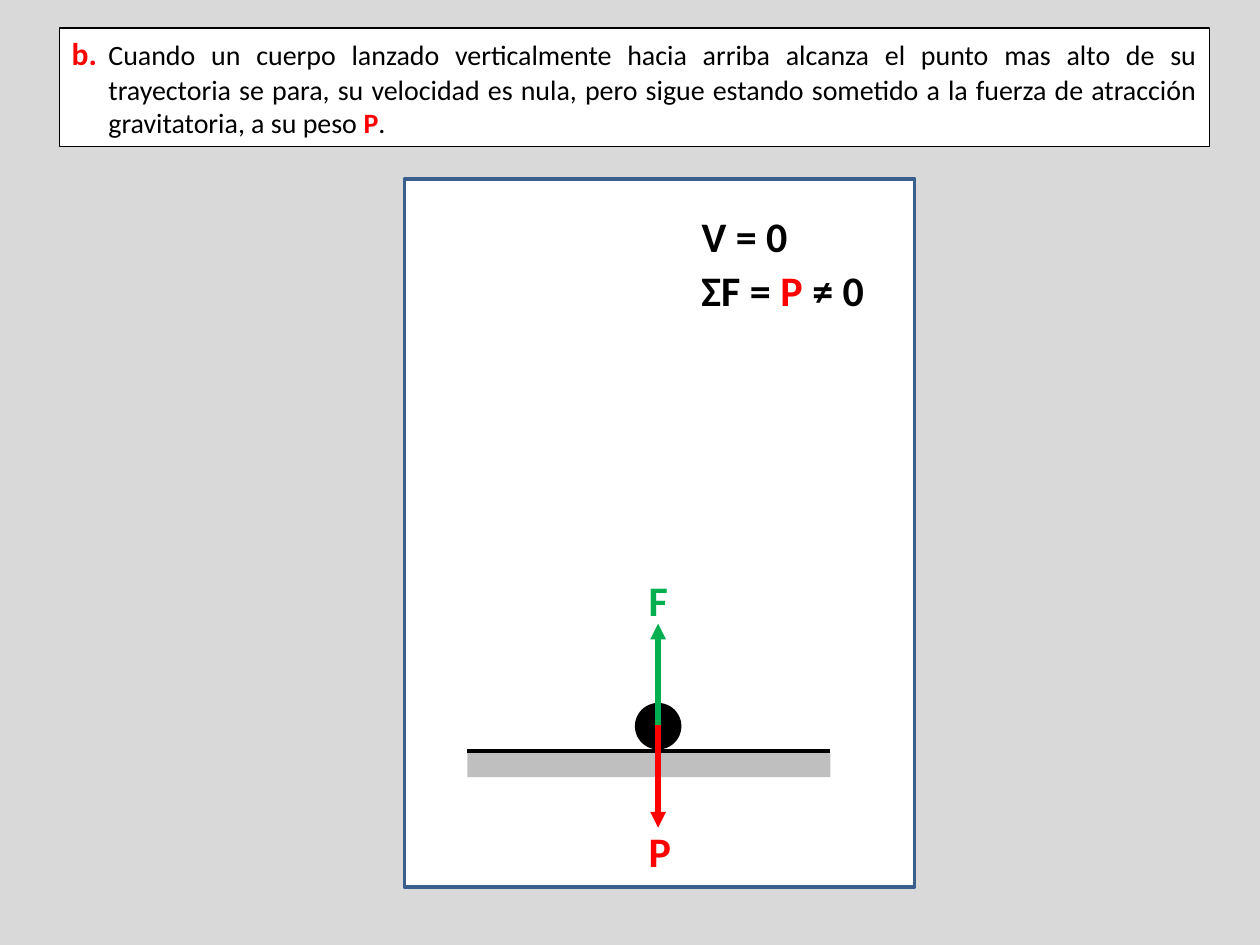
from lxml import etree
from pptx import Presentation
from pptx.dml.color import RGBColor
from pptx.enum.shapes import MSO_CONNECTOR, MSO_SHAPE
from pptx.enum.text import MSO_ANCHOR, PP_ALIGN
from pptx.oxml.ns import qn
from pptx.util import Pt

RECTANGLE = MSO_SHAPE.RECTANGLE
OVAL = MSO_SHAPE.OVAL
STRAIGHT = MSO_CONNECTOR.STRAIGHT
TOP = MSO_ANCHOR.TOP
JUSTIFY = PP_ALIGN.JUSTIFY
BLACK, WHITE, RED, GREEN = "000000", "FFFFFF", "FF0000", "00B050"


def color(value):
    return RGBColor.from_string(value)


def add_runs(paragraph, runs):
    for text, size, shade, bold in runs:
        run = paragraph.add_run()
        run.text = text
        run.font.name = "Calibri"
        run.font.size = Pt(size)
        run.font.bold = bold
        run.font.color.rgb = color(shade)


prs = Presentation()
prs.slide_width, prs.slide_height = Pt(720), Pt(540)
slide = prs.slides.add_slide(prs.slide_layouts[6])
slide.background.fill.solid()
slide.background.fill.fore_color.rgb = color("D9D9D9")

blocks = []
for preset, left, top, width, height, fill, outline, weight in [
    (RECTANGLE, 231.1, 102.2, 291.6, 404.6, WHITE, "3A5F8C", 2),
    (RECTANGLE, 267.1, 429.8, 207.4, 14.4, "BFBFBF", None, 0),
    (OVAL, 362.8, 401.7, 26.6, 26.6, BLACK, None, 0),
    (RECTANGLE, 33.9, 16.1, 657.4, 67.7, WHITE, BLACK, 0.75),
]:
    block = slide.shapes.add_shape(preset, Pt(left), Pt(top), Pt(width), Pt(height))
    block.shadow.inherit = False
    block.fill.solid()
    block.fill.fore_color.rgb = color(fill)
    if outline:
        block.line.color.rgb = color(outline)
        block.line.width = Pt(weight)
    else:
        block.line.fill.background()
    blocks.append(block)

for x1, y1, x2, y2, shade, weight, is_force in [
    (267.1, 429.4, 474.5, 429.4, BLACK, 2.25, False),
    (376.1, 414.5, 376.1, 473, RED, 3, True),
    (376.1, 414.2, 376.1, 356.4, GREEN, 3, True),
]:
    stroke = slide.shapes.add_connector(STRAIGHT, Pt(x1), Pt(y1), Pt(x2), Pt(y2))
    stroke.line.color.rgb = color(shade)
    stroke.line.width = Pt(weight)
    if is_force:
        etree.SubElement(stroke.line._get_or_add_ln(), qn("a:tailEnd"), type="triangle")
    etree.SubElement(stroke._element.spPr, qn("a:effectLst"))

for left, top, width, parts in [
    (363.6, 468.3, 32.4, [("P", RED)]),
    (363.6, 325, 32.4, [("F", GREEN)]),
    (393.8, 116.8, 72.7, [("V = 0", BLACK)]),
    (393.8, 147.8, 119.5, [("ΣF = ", BLACK), ("P", RED), (" ≠ 0", BLACK)]),
]:
    label = slide.shapes.add_textbox(Pt(left), Pt(top), Pt(width), Pt(36))
    label.text_frame.word_wrap = True
    add_runs(label.text_frame.paragraphs[0], [(text, 24, shade, True) for text, shade in parts])

explanation = blocks[-1].text_frame
explanation.word_wrap = True
explanation.vertical_anchor = TOP
paragraph = explanation.paragraphs[0]
paragraph.alignment = JUSTIFY
indent = paragraph._p.get_or_add_pPr()
indent.set("marL", str(Pt(21)))
indent.set("indent", str(-Pt(21)))
add_runs(paragraph, [
    ("b.\t", 18, RED, True),
    ("Cuando un cuerpo lanzado verticalmente hacia arriba alcanza el punto mas alto de su "
     "trayectoria se para, su velocidad es nula, pero sigue estando sometido a la fuerza de "
     "atracción gravitatoria, a su peso ", 16, BLACK, False),
    ("P", 16, RED, True),
    (".", 16, BLACK, False),
])

prs.save("out.pptx")
